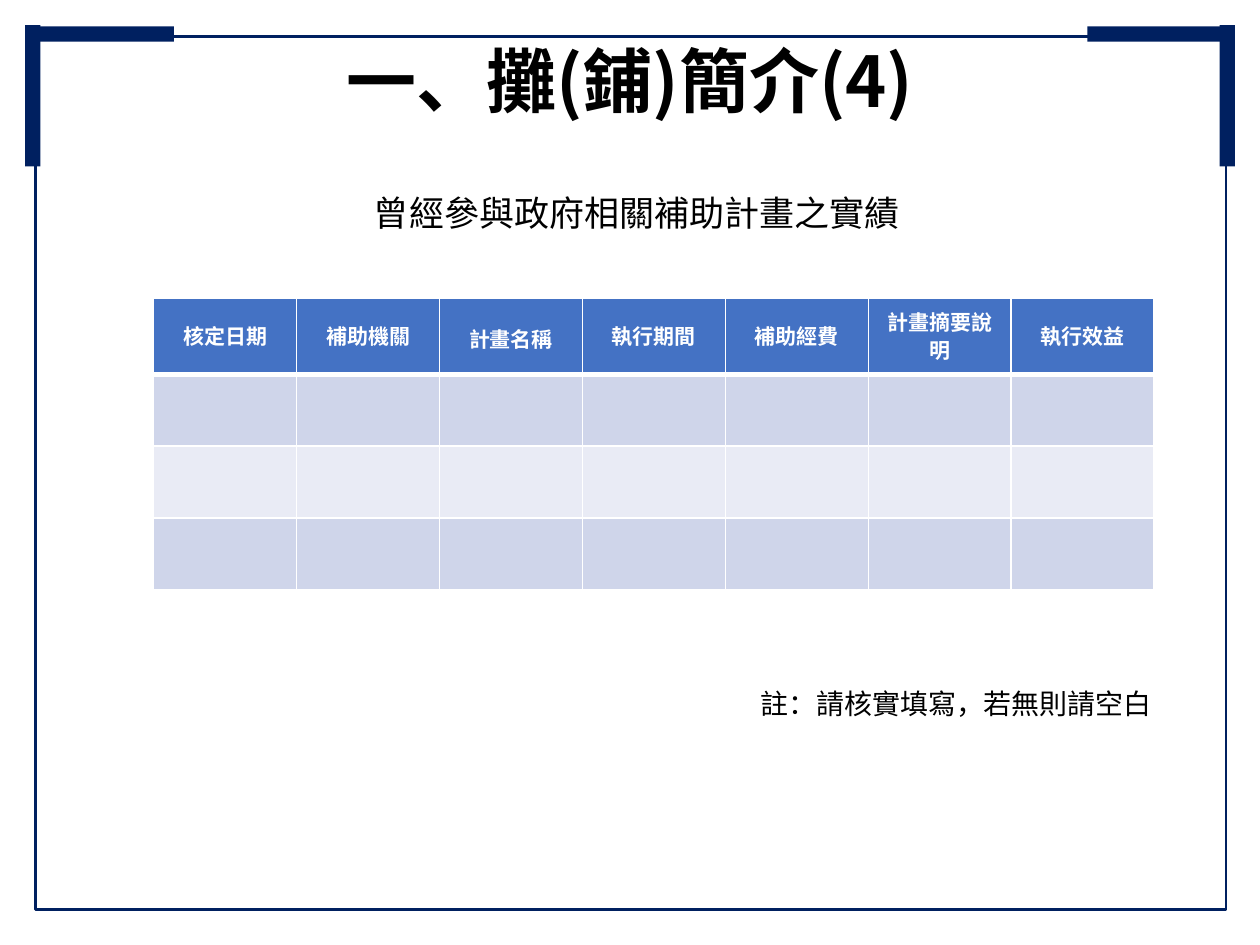
from lxml import etree
from pptx import Presentation
from pptx.dml.color import RGBColor
from pptx.enum import shapes, text
from pptx.oxml.ns import qn
from pptx.util import Inches, Pt

FONT = "Noto Sans CJK SC"
NAVY = RGBColor(0x00, 0x20, 0x60)
BLACK = RGBColor(0x00, 0x00, 0x00)
WHITE = RGBColor(0xFF, 0xFF, 0xFF)
HEADER_BLUE = RGBColor(0x44, 0x72, 0xC4)
BANDS = [RGBColor(0xCF, 0xD5, 0xEA), RGBColor(0xE9, 0xEB, 0xF5)]

FRAME = (0.28, 0.29, 9.45, 6.93)
CORNER_BARS = [
    (0.26, 0.21, 1.12, 0.12),
    (0.2, 0.2, 0.12, 1.12),
    (8.63, 0.21, 1.12, 0.12),
    (9.68, 0.2, 0.12, 1.12),
]
# text, box, alignment, anchor, font
TEXTS = [
    ("一、攤(鋪)簡介(4)", (0.5, 0.13, 9, 1.01),
     text.PP_ALIGN.CENTER, text.MSO_ANCHOR.MIDDLE, {"size": Pt(40), "bold": True}),
    ("曾經參與政府相關補助計畫之實績", (2.87, 1.47, 5, 0.44),
     text.PP_ALIGN.LEFT, text.MSO_ANCHOR.TOP, {"size": Pt(20)}),
    ("註：請核實填寫，若無則請空白", (5.94, 5.4, 5.67, 0.37),
     text.PP_ALIGN.LEFT, text.MSO_ANCHOR.TOP, {"size": Pt(16)}),
]
# heading, line spacing in points
HEADINGS = [
    ("核定日期", 16), ("補助機關", 16), ("計畫名稱", 20), ("執行期間", 16),
    ("補助經費", 16), ("計畫摘要說明", 16), ("執行效益", 16),
]
TABLE_BOX = (1.22, 2.37, 7.94, 2.31)
ROW_HEIGHTS = [0.6, 0.57, 0.57, 0.57]


def inches(box):
    return [Inches(v) for v in box]


def add_rect(s, box):
    sp = s.shapes.add_shape(shapes.MSO_SHAPE.RECTANGLE, *inches(box))
    sp.shadow.inherit = False
    return sp


def write(p, words, color, formats):
    r = p.add_run()
    r.text = words
    r.font.color.rgb = color
    for name, value in {"name": FONT, **formats}.items():
        setattr(r.font, name, value)
    etree.SubElement(r.font._element, qn("a:ea"), typeface=FONT)


def set_borders(cell, widths):
    tc_pr = cell._tc.get_or_add_tcPr()
    for side, width in widths.items():
        ln = etree.SubElement(tc_pr, qn(f"a:ln{side}"), w=str(Pt(width)))
        fill = etree.SubElement(ln, qn("a:solidFill"))
        etree.SubElement(fill, qn("a:srgbClr"), val=str(WHITE))


def add_frame(s):
    frame = add_rect(s, FRAME)
    frame.fill.background()
    frame.line.color.rgb = NAVY
    frame.line.width = Pt(1.5)
    for box in CORNER_BARS:
        bar = add_rect(s, box)
        bar.fill.solid()
        bar.fill.fore_color.rgb = NAVY
        bar.line.fill.background()


def add_text(s, words, box, align, anchor, formats):
    tf = s.shapes.add_textbox(*inches(box)).text_frame
    tf.word_wrap = True
    tf.vertical_anchor = anchor
    tf.paragraphs[0].alignment = align
    write(tf.paragraphs[0], words, BLACK, formats)


def add_grants_table(s):
    table = s.shapes.add_table(len(ROW_HEIGHTS), len(HEADINGS), *inches(TABLE_BOX)).table
    for col in table.columns:
        col.width = Inches(TABLE_BOX[2] / len(HEADINGS))
    for i, height in enumerate(ROW_HEIGHTS):
        table.rows[i].height = Inches(height)
        for cell in table.rows[i].cells:
            set_borders(cell, {"L": 1, "R": 1, "T": 3 if i == 1 else 1, "B": 1 if i else 3})
            cell.fill.solid()
            cell.fill.fore_color.rgb = BANDS[(i - 1) % 2] if i else HEADER_BLUE
    for cell, (heading, spacing) in zip(table.rows[0].cells, HEADINGS):
        cell.vertical_anchor = text.MSO_ANCHOR.MIDDLE
        cell.margin_left = cell.margin_right = Inches(0.07)
        cell.margin_top = cell.margin_bottom = 0
        p = cell.text_frame.paragraphs[0]
        p.alignment = text.PP_ALIGN.CENTER
        p.line_spacing = Pt(spacing)
        write(p, heading, WHITE, {"size": Pt(12), "bold": True})


def main():
    prs = Presentation()
    prs.slide_width, prs.slide_height = Inches(10), Inches(7.5)
    s = prs.slides.add_slide(prs.slide_layouts[6])
    add_frame(s)
    for item in TEXTS:
        add_text(s, *item)
    add_grants_table(s)
    prs.save("out.pptx")


if __name__ == "__main__":
    main()
